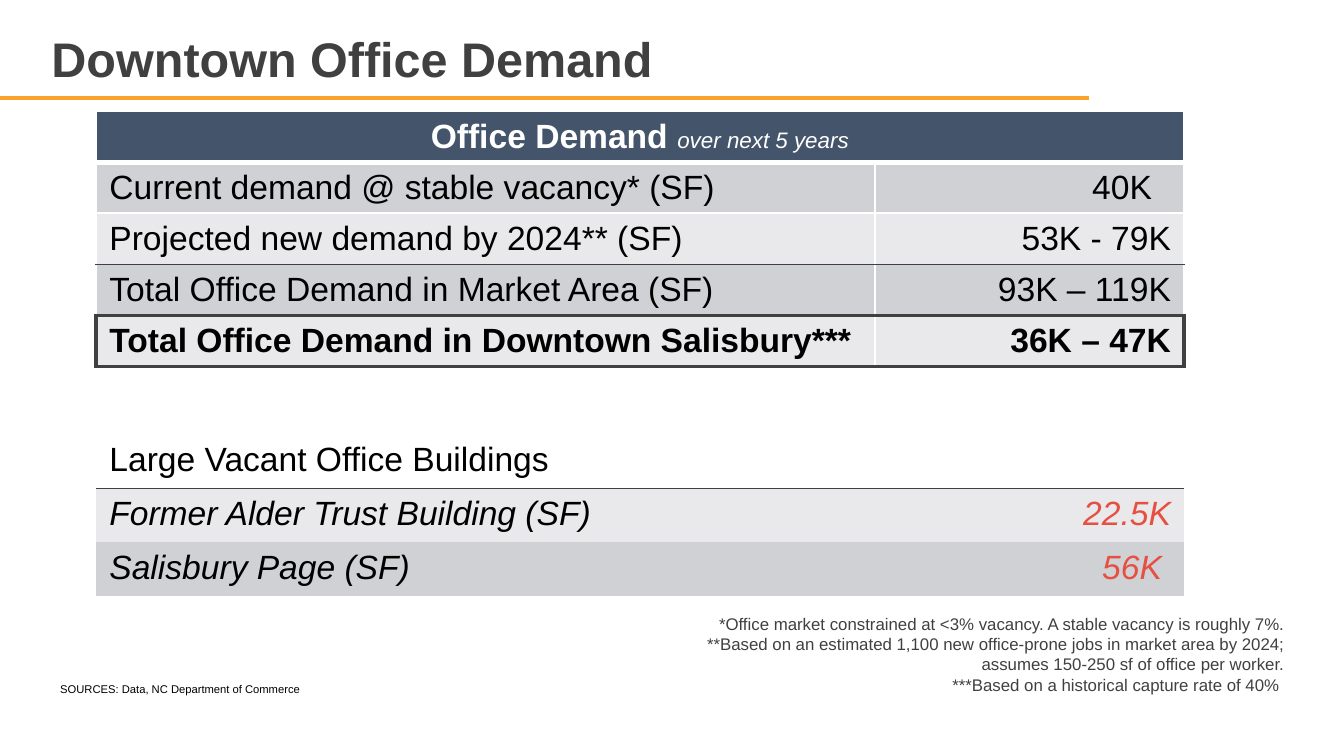
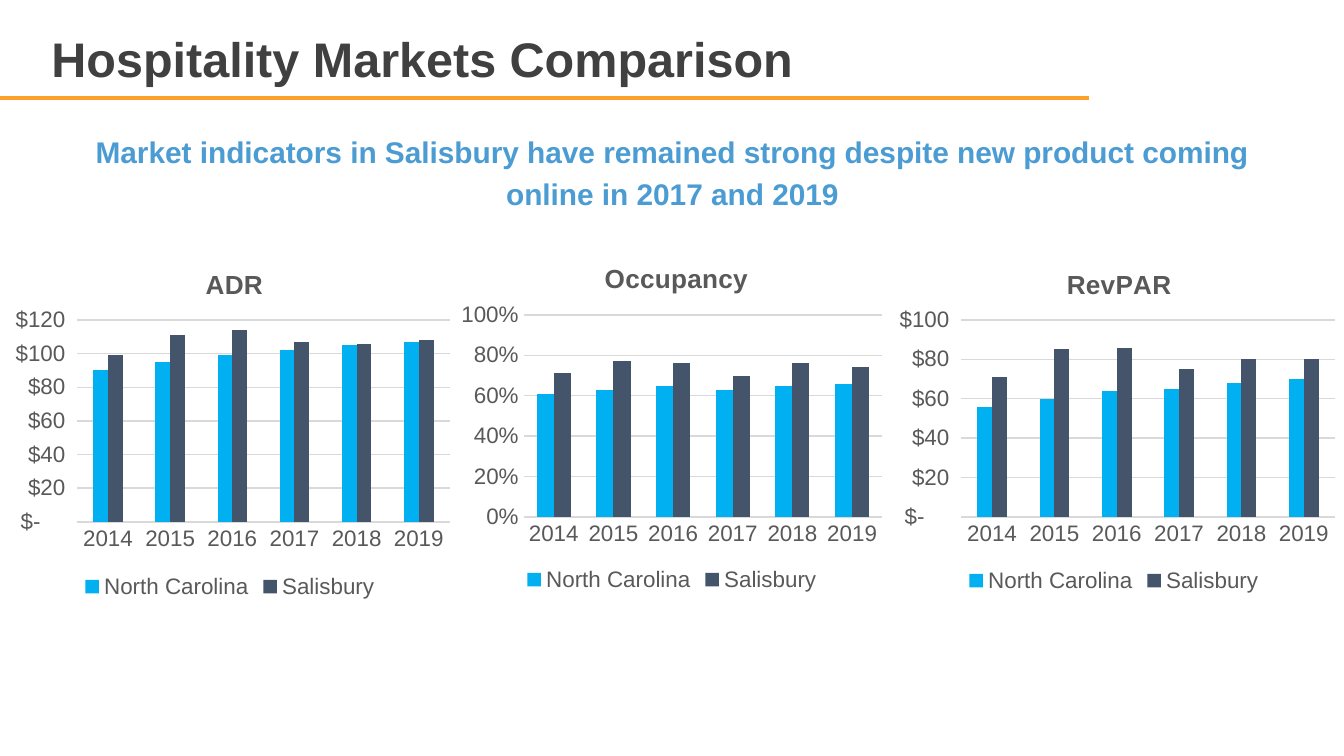
import dataclasses

import pptx
import pptx.chart.data
import pptx.dml.color
import pptx.enum.chart
import pptx.enum.shapes
import pptx.enum.text
import pptx.oxml
import pptx.oxml.ns
import pptx.util
from lxml import etree

qn = pptx.oxml.ns.qn
ALIGN = pptx.enum.text.PP_ALIGN
ANCHOR = pptx.enum.text.MSO_ANCHOR


@dataclasses.dataclass(frozen=True)
class Theme:
    font: str = "Arial"
    dark: str = "404040"
    orange: str = "FCA129"
    blue: str = "4B9CD3"
    white: str = "FFFFFF"
    black: str = "000000"
    red: str = "E65042"
    navy: str = "44546A"
    band_dark: str = "CFD1D4"
    band_light: str = "E9E9EB"
    sky: str = "00B0F0"
    axis_text: str = "595959"
    grid: str = "D9D9D9"
    title: int = 26
    subtitle: int = 16
    cell: int = 18
    chart_title: int = 14
    small: int = 12
    note: int = 9
    source: int = 6


T = Theme()

# Content: slide 1
DEMAND_TITLE = "Downtown Office Demand"
DEMAND_HEADER = ("Office Demand ", "over next 5 years")
DEMAND_ROWS = [
    ("Current demand @ stable vacancy* (SF)", "40K"),
    ("Projected new demand by 2024** (SF)", "53K - 79K"),
    ("Total Office Demand in Market Area (SF)", "93K – 119K"),
    ("Total Office Demand in Downtown Salisbury***", "36K – 47K"),
]
VACANT_ROWS = [
    ("Large Vacant Office Buildings", ""),
    ("Former Alder Trust Building (SF)", "22.5K"),
    ("Salisbury Page (SF)", "56K"),
]
VALUE_INDENT = {"40K": 19, "56K": 9}
NOTES = [
    "*Office market constrained at <3% vacancy. A stable vacancy is roughly 7%.",
    "**Based on an estimated 1,100 new office-prone jobs in market area by 2024; "
    "assumes 150-250 sf of office per worker.",
    "***Based on a historical capture rate of 40% ",
]
SOURCES = "SOURCES: Data, NC Department of Commerce"

# Content: slide 2
HOTEL_TITLE = "Hospitality Markets Comparison"
HOTEL_MESSAGE = ("Market indicators in Salisbury have remained strong despite "
                 "new product coming online in 2017 and 2019")
YEARS = ["2014", "2015", "2016", "2017", "2018", "2019"]
SERIES = [("North Carolina", T.sky), ("Salisbury", T.navy)]
DOLLARS = '_("$"* #,##0_);_("$"* \\(#,##0\\);_("$"* "-"??_);_(@_)'
# box and plot are left, top, width, height; title_at is left, top
CHARTS = [
    dict(title="Occupancy", box=(453, 235, 438, 362), plot=(524, 315, 358, 202),
         title_at=(600, 257), fmt="0%", top=1, step=0.2, gap=150,
         values=[(0.61, 0.63, 0.65, 0.63, 0.65, 0.66),
                 (0.71, 0.77, 0.76, 0.7, 0.76, 0.74)]),
    dict(title="ADR", box=(0, 242, 460, 362), plot=(77, 320, 373, 202),
         title_at=(201, 263), fmt=DOLLARS, top=120, step=20, gap=219,
         values=[(90, 95, 99, 102, 105, 107), (99, 111, 114, 107, 106, 108)]),
    dict(title="RevPAR", box=(884, 242, 460, 356), plot=(961, 320, 374, 197),
         title_at=(1062, 263), fmt=DOLLARS, top=100, step=20, gap=219,
         values=[(56, 60, 64, 65, 68, 70), (71, 85, 86, 75, 80, 80)]),
]

# Shared measures
PX_PER_INCH = 134.4
SLIDE = (1344, 756)
TABLE_LEFT = 96
COLUMNS = (779, 309)
PADDING = 13


def px(n):
    return pptx.util.Emu(round(n * 914400 / PX_PER_INCH))


def pxs(box):
    return [px(n) for n in box]


def rgb(color):
    return pptx.dml.color.RGBColor.from_string(color)


def style(font, size, color, bold=False, italic=False):
    font.name, font.size = T.font, pptx.util.Pt(size)
    font.bold, font.italic = bold, italic
    font.color.rgb = rgb(color)


def add_run(p, text, size, color, bold=False, italic=False):
    r = p.add_run()
    r.text = text
    style(r.font, size, color, bold, italic)


def add_text(s, box, lines, size, color, align, bold=False):
    tf = s.shapes.add_textbox(*pxs(box)).text_frame
    tf.word_wrap = True
    for i, line in enumerate(lines):
        p = tf.add_paragraph() if i else tf.paragraphs[0]
        p.alignment = align
        add_run(p, line, size, color, bold)
    return tf


def add_titled_slide(prs, title, width):
    s = prs.slides.add_slide(prs.slide_layouts[5])
    # Rule under the title
    line = s.shapes.add_connector(pptx.enum.shapes.MSO_CONNECTOR.STRAIGHT,
                                  *pxs((0, 98, 1089, 98)))
    line.line.color.rgb = rgb(T.orange)
    line.line.width = pptx.util.Pt(2)
    etree.SubElement(line._element.spPr, qn("a:effectLst"))
    # Title
    sp = s.shapes.title
    sp.left, sp.top, sp.width, sp.height = pxs((38, 20, width, 77))
    tf = sp.text_frame
    tf.vertical_anchor = ANCHOR.MIDDLE
    tf.auto_size = pptx.enum.text.MSO_AUTO_SIZE.NONE
    p = tf.paragraphs[0]
    p.alignment = ALIGN.LEFT
    add_run(p, title, T.title, T.dark, bold=True)
    return s


# Tables: an edge is (colour, points), or None for no line
def set_edges(cell, left, right, top, bottom):
    tcPr = cell._tc.get_or_add_tcPr()
    for side, edge in zip("LRTB", (left, right, top, bottom)):
        ln = etree.SubElement(tcPr, qn("a:ln" + side))
        if edge is None:
            etree.SubElement(ln, qn("a:noFill"))
            continue
        color, points = edge
        ln.set("w", str(pptx.util.Pt(points)))
        fill = etree.SubElement(ln, qn("a:solidFill"))
        etree.SubElement(fill, qn("a:srgbClr")).set("val", color)


def add_grid(s, top, row_height, fills, rules, sides, inner):
    """rules are the horizontal lines, sides the outer line of each row."""
    n = len(fills)
    table = s.shapes.add_table(n, 2, px(TABLE_LEFT), px(top), px(sum(COLUMNS)),
                               px(n * row_height)).table
    table.first_row = table.horz_banding = False
    for column, width in zip(table.columns, COLUMNS):
        column.width = px(width)
    for i, fill in enumerate(fills):
        table.rows[i].height = px(row_height)
        for j in range(2):
            cell = table.cell(i, j)
            left, right = (inner, sides[i]) if j else (sides[i], inner)
            set_edges(cell, left, right, rules[i], rules[i + 1])
            if fill:
                cell.fill.solid()
                cell.fill.fore_color.rgb = rgb(fill)
            else:
                cell.fill.background()
    return table


def fill_row(table, i, label, value, value_color=T.black, **font):
    add_run(table.cell(i, 0).text_frame.paragraphs[0], label, T.cell, T.black, **font)
    cell = table.cell(i, 1)
    p = cell.text_frame.paragraphs[0]
    p.alignment = ALIGN.RIGHT
    p.font.size = pptx.util.Pt(T.cell)
    if value:
        cell.margin_right = px(PADDING + VALUE_INDENT.get(value, 0))
        add_run(p, value, T.cell, value_color, **font)


# Charts
def manual_layout(chart_box, left, top, width=None, height=None):
    layout = etree.Element(qn("c:layout"))
    manual = etree.SubElement(layout, qn("c:manualLayout"))
    x, y, w, h = chart_box
    items = [("xMode", "edge"), ("yMode", "edge"),
             ("x", round((left - x) / w, 4)), ("y", round((top - y) / h, 4))]
    if width:
        items = [("layoutTarget", "inner")] + items
        items += [("w", round(width / w, 4)), ("h", round(height / h, 4))]
    for tag, value in items:
        etree.SubElement(manual, qn("c:" + tag)).set("val", str(value))
    return layout


def place(parent, layout, index):
    for old in parent.findall(qn("c:layout")):
        parent.remove(old)
    parent.insert(index, layout)


def add_column_chart(s, c):
    data = pptx.chart.data.CategoryChartData()
    data.categories = YEARS
    for (name, _), values in zip(SERIES, c["values"]):
        data.add_series(name, values)
    chart = s.shapes.add_chart(pptx.enum.chart.XL_CHART_TYPE.COLUMN_CLUSTERED,
                               *pxs(c["box"]), data).chart
    style(chart.font, T.small, T.axis_text)
    # Title and plot position
    add_run(chart.chart_title.text_frame.paragraphs[0], c["title"],
            T.chart_title, T.axis_text, bold=True)
    chart.chart_title.include_in_layout = False
    root = chart._chartSpace
    place(root.find(".//" + qn("c:title")), manual_layout(c["box"], *c["title_at"]), 1)
    place(root.find(".//" + qn("c:plotArea")), manual_layout(c["box"], *c["plot"]), 0)
    # Columns
    plot = chart.plots[0]
    plot.gap_width, plot.overlap, plot.vary_by_categories = c["gap"], 0, False
    for series, (_, color) in zip(plot.series, SERIES):
        series.format.fill.solid()
        series.format.fill.fore_color.rgb = rgb(color)
    # Axes
    cat, val = chart.category_axis, chart.value_axis
    for axis in (cat, val):
        axis.major_tick_mark = pptx.enum.chart.XL_TICK_MARK.NONE
        style(axis.tick_labels.font, T.small, T.axis_text)
    for line in (cat.format.line, val.major_gridlines.format.line):
        line.color.rgb = rgb(T.grid)
        line.width = pptx.util.Pt(0.75)
    val.format.line.fill.background()
    val.minimum_scale, val.maximum_scale, val.major_unit = 0, c["top"], c["step"]
    val.tick_labels.number_format = c["fmt"]
    val.tick_labels.number_format_is_linked = False
    # Legend
    chart.has_legend = True
    chart.legend.position = pptx.enum.chart.XL_LEGEND_POSITION.BOTTOM
    chart.legend.include_in_layout = False
    style(chart.legend.font, T.small, T.axis_text)


def build_demand(prs):
    s = add_titled_slide(prs, DEMAND_TITLE, 1204)
    thin, gap = (T.white, 1), (T.white, 3)
    hair, frame = (T.dark, 0.5), (T.dark, 2.25)
    # Demand table
    table = add_grid(s, 111, 51, [T.navy] + [T.band_dark, T.band_light] * 2,
                     [thin, gap, thin, hair, frame, frame], [thin] * 4 + [frame], thin)
    header = table.cell(0, 0)
    header.merge(table.cell(0, 1))
    header.vertical_anchor = ANCHOR.MIDDLE
    p = header.text_frame.paragraphs[0]
    p.alignment = ALIGN.CENTER
    add_run(p, DEMAND_HEADER[0], T.cell, T.white, bold=True)
    add_run(p, DEMAND_HEADER[1], T.small, T.white, italic=True)
    for i, row in enumerate(DEMAND_ROWS, 1):
        fill_row(table, i, *row, bold=i == len(DEMAND_ROWS))
    # Footnotes and sources
    add_text(s, (664, 607, 633, 95), NOTES, T.note, T.dark, ALIGN.RIGHT)
    add_text(s, (47, 676, 379, 27), [SOURCES], T.source, T.black, ALIGN.LEFT)
    # Vacant buildings table
    table = add_grid(s, 434, 54, [None, T.band_light, T.band_dark],
                     [None, hair, None, None], [None] * 3, None)
    for i, row in enumerate(VACANT_ROWS):
        fill_row(table, i, *row, value_color=T.red, italic=i > 0)


def build_hotels(prs):
    s = add_titled_slide(prs, HOTEL_TITLE, 1051)
    tf = add_text(s, (38, 121, 1269, 98), [HOTEL_MESSAGE], T.subtitle, T.blue,
                  ALIGN.CENTER, bold=True)
    tf.vertical_anchor = ANCHOR.MIDDLE
    tf.paragraphs[0].line_spacing = 1.15
    for c in CHARTS:
        add_column_chart(s, c)


def main():
    prs = pptx.Presentation()
    prs.slide_width, prs.slide_height = pxs(SLIDE)
    build_demand(prs)
    build_hotels(prs)
    prs.save("out.pptx")


if __name__ == "__main__":
    main()
